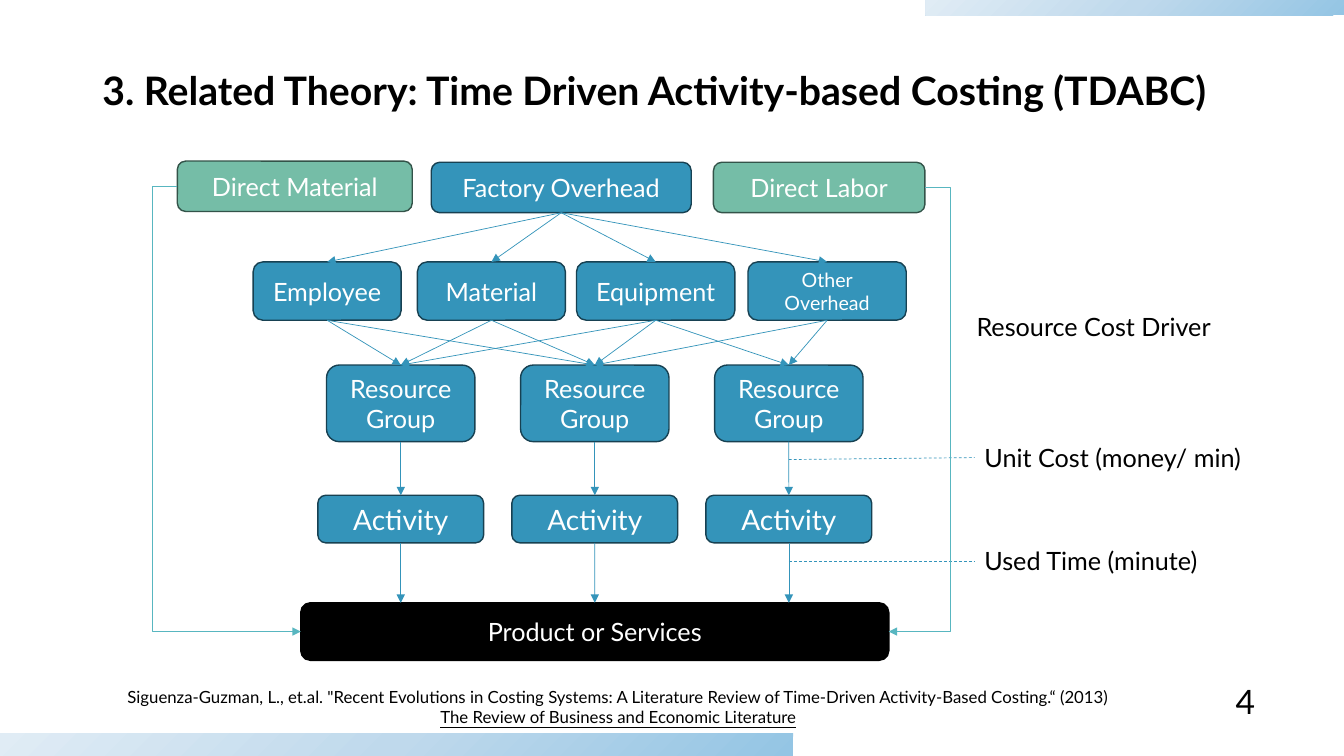
from copy import deepcopy
from dataclasses import dataclass

from lxml import etree
from pptx import Presentation
from pptx.dml import color
from pptx.enum import dml, shapes, text
from pptx.oxml import ns
from pptx.shapes import autoshape, connector
from pptx.slide import Slide
from pptx.util import Cm, Pt

TOP, LEFT, BOTTOM, RIGHT = range(4)


@dataclass(frozen=True)
class Theme:
    font: str = "Lato"
    blue: str = "3494BA"
    blue_edge: str = "174152"
    green: str = "75BDA7"
    green_edge: str = "335349"
    teal: str = "58B6C0"
    black: str = "000000"
    white: str = "FFFFFF"
    bar: tuple[str, ...] = ("94C5E4", "BFD9EC", "E0ECF5")
    title: int = 28
    number: int = 24
    activity: int = 20
    body: int = 18
    small: int = 14
    source: int = 12
    edge: float = 1
    thin: float = 0.5


T = Theme()


@dataclass(frozen=True)
class Area:
    x: float
    y: float
    w: float
    h: float

    def lengths(self) -> tuple[Cm, Cm, Cm, Cm]:
        return Cm(self.x), Cm(self.y), Cm(self.w), Cm(self.h)


@dataclass(frozen=True)
class Node:
    label: str
    area: Area
    fill: str = T.blue
    edge: str = T.blue_edge
    size: int = T.body


@dataclass(frozen=True)
class Caption:
    label: str
    area: Area
    size: int = T.body
    bold: bool = False
    align: text.PP_ALIGN = text.PP_ALIGN.LEFT
    anchor: text.MSO_ANCHOR = text.MSO_ANCHOR.TOP
    spacing: float = 1.0


def rgb(value: str) -> color.RGBColor:
    return color.RGBColor.from_string(value)


def write(sp: autoshape.Shape, label: str, size: int, ink: str,
          align: text.PP_ALIGN, anchor: text.MSO_ANCHOR) -> None:
    tf = sp.text_frame
    tf.word_wrap = True
    tf.vertical_anchor = anchor
    tf.text = label
    for p in tf.paragraphs:
        p.alignment = align
        for r in p.runs:
            r.font.name = T.font
            r.font.size = Pt(size)
            r.font.color.rgb = rgb(ink)


def add_bar(s: Slide, area: Area) -> None:
    sp = s.shapes.add_shape(shapes.MSO_SHAPE.RECTANGLE, *area.lengths())
    sp.shadow.inherit = False
    sp.line.fill.background()
    sp.fill.gradient()
    sp.fill.gradient_angle = 135
    stops = sp._element.spPr.find(".//" + ns.qn("a:gsLst"))
    stops.append(deepcopy(stops[-1]))
    for i, (stop, value) in enumerate(zip(sp.fill.gradient_stops, T.bar)):
        stop.color.rgb = rgb(value)
        stop.position = i / 2


def add_node(s: Slide, node: Node) -> autoshape.Shape:
    sp = s.shapes.add_shape(shapes.MSO_SHAPE.ROUNDED_RECTANGLE, *node.area.lengths())
    sp.shadow.inherit = False
    sp.fill.solid()
    sp.fill.fore_color.rgb = rgb(node.fill)
    sp.line.color.rgb = rgb(node.edge)
    sp.line.width = Pt(T.edge)
    write(sp, node.label, node.size, T.white,
          text.PP_ALIGN.CENTER, text.MSO_ANCHOR.MIDDLE)
    return sp


def add_caption(s: Slide, cap: Caption) -> autoshape.Shape:
    sp = s.shapes.add_textbox(*cap.area.lengths())
    write(sp, cap.label, cap.size, T.black, cap.align, cap.anchor)
    for p in sp.text_frame.paragraphs:
        p.line_spacing = cap.spacing
        for r in p.runs:
            r.font.bold = cap.bold
    return sp


def add_line(s: Slide, x1: int, y1: int, x2: int, y2: int, ink: str = T.blue,
             kind: shapes.MSO_CONNECTOR = shapes.MSO_CONNECTOR.STRAIGHT,
             arrow: bool = True) -> connector.Connector:
    line = s.shapes.add_connector(kind, x1, y1, x2, y2)
    line.line.color.rgb = rgb(ink)
    line.line.width = Pt(T.thin)
    if arrow:
        etree.SubElement(line.line._get_or_add_ln(), ns.qn("a:tailEnd"), type="triangle")
    else:
        line.line.dash_style = dml.MSO_LINE.DASH
    etree.SubElement(line._element.spPr, ns.qn("a:effectLst"))
    return line


def add_flow(s: Slide, start: autoshape.Shape, end: autoshape.Shape) -> None:
    line = add_line(s, 0, 0, 0, 0)
    line.begin_connect(start, BOTTOM)
    line.end_connect(end, TOP)


def add_bypass(s: Slide, start: autoshape.Shape, end: autoshape.Shape,
               side: int, reach: float) -> None:
    line = add_line(s, 0, 0, 0, 0, T.teal, shapes.MSO_CONNECTOR.ELBOW)
    line.begin_connect(start, side)
    line.end_connect(end, side)
    guides = line._element.spPr.find(".//" + ns.qn("a:avLst"))
    bend = round(-100000 * Cm(reach) / line.width)
    etree.SubElement(guides, ns.qn("a:gd"), name="adj1", fmla=f"val {bend}")


def main() -> None:
    prs = Presentation()
    prs.slide_width, prs.slide_height = Cm(33.87), Cm(19.05)
    s = prs.slides.add_slide(prs.slide_layouts[6])

    for area in (Area(0, 18.48, 19.99, 0.57), Area(23.32, 0, 10.55, 0.38)):
        add_bar(s, area)

    middle = text.MSO_ANCHOR.MIDDLE
    for cap in (
        Caption("3. Related Theory: Time Driven Activity-based Costing (TDABC)",
                Area(2.33, 1.4, 29.21, 1.88), T.title, True, anchor=middle, spacing=0.9),
        Caption("4", Area(29.21, 16.94, 2.67, 1.45), T.number,
                align=text.PP_ALIGN.RIGHT, anchor=middle),
        Caption("Resource Cost Driver", Area(24.36, 7.72, 6.99, 1.02)),
        Caption("Unit Cost (money/ min)", Area(24.56, 11.02, 7.32, 1.02)),
        Caption("Used Time (minute)", Area(24.56, 13.61, 6.4, 1.02)),
    ):
        add_caption(s, cap)

    direct_material, overhead, direct_labor = [add_node(s, node) for node in (
        Node("Direct Material", Area(4.47, 4.06, 5.92, 1.27), T.green, T.green_edge),
        Node("Factory Overhead", Area(10.87, 4.09, 6.55, 1.27)),
        Node("Direct Labor", Area(17.98, 4.09, 5.33, 1.27), T.green, T.green_edge),
    )]
    resources = [add_node(s, Node(label, Area(x, 6.6, w, 1.47), size=size))
                 for label, x, w, size in (
                     ("Employee", 6.38, 3.73, T.body),
                     ("Material", 10.52, 3.73, T.body),
                     ("Equipment", 14.53, 3.99, T.body),
                     ("Other Overhead", 18.85, 3.99, T.small))]
    columns = [10.1 + 4.89 * i for i in range(3)]
    groups = [add_node(s, Node("Resource Group", Area(x - 1.87, 9.2, 3.74, 1.93)))
              for x in columns]
    activities = [add_node(s, Node("Activity", Area(x - 2.09, 12.48, 4.18, 1.2),
                                   size=T.activity)) for x in columns]
    product = add_node(s, Node("Product or Services", Area(7.58, 15.19, 14.82, 1.45),
                               T.black, T.black))

    feeds = ((0, 1), (0, 1), (0, 1, 2), (1, 2))
    for resource, targets in zip(resources, feeds):
        add_flow(s, overhead, resource)
        for i in targets:
            add_flow(s, resource, groups[i])
    for group, activity in zip(groups, activities):
        add_flow(s, group, activity)
    add_flow(s, activities[1], product)
    for x, activity in ((columns[0], activities[0]), (columns[2], activities[2])):
        line = add_line(s, Cm(x), Cm(13.68), Cm(x), product.top)
        line.begin_connect(activity, BOTTOM)

    for y1, y2 in ((11.58, 11.53), (14.15, 14.15)):
        add_line(s, Cm(columns[2]), Cm(y1), Cm(24.56), Cm(y2), arrow=False)
    add_bypass(s, direct_material, product, LEFT, 0.64)
    add_bypass(s, direct_labor, product, RIGHT, 0.64)

    source = add_caption(s, Caption(
        "Siguenza-Guzman, L., et.al. \"Recent Evolutions in Costing Systems: A Literature "
        "Review of Time-Driven Activity-Based Costing.“ (2013)\n"
        "The Review of Business and Economic Literature",
        Area(1.96, 17.17, 27.25, 1.27), T.source, align=text.PP_ALIGN.CENTER))
    source.fill.solid()
    source.fill.fore_color.rgb = rgb(T.white)
    source.text_frame.paragraphs[1].runs[0].font.underline = True

    prs.save("out.pptx")


if __name__ == "__main__":
    main()
